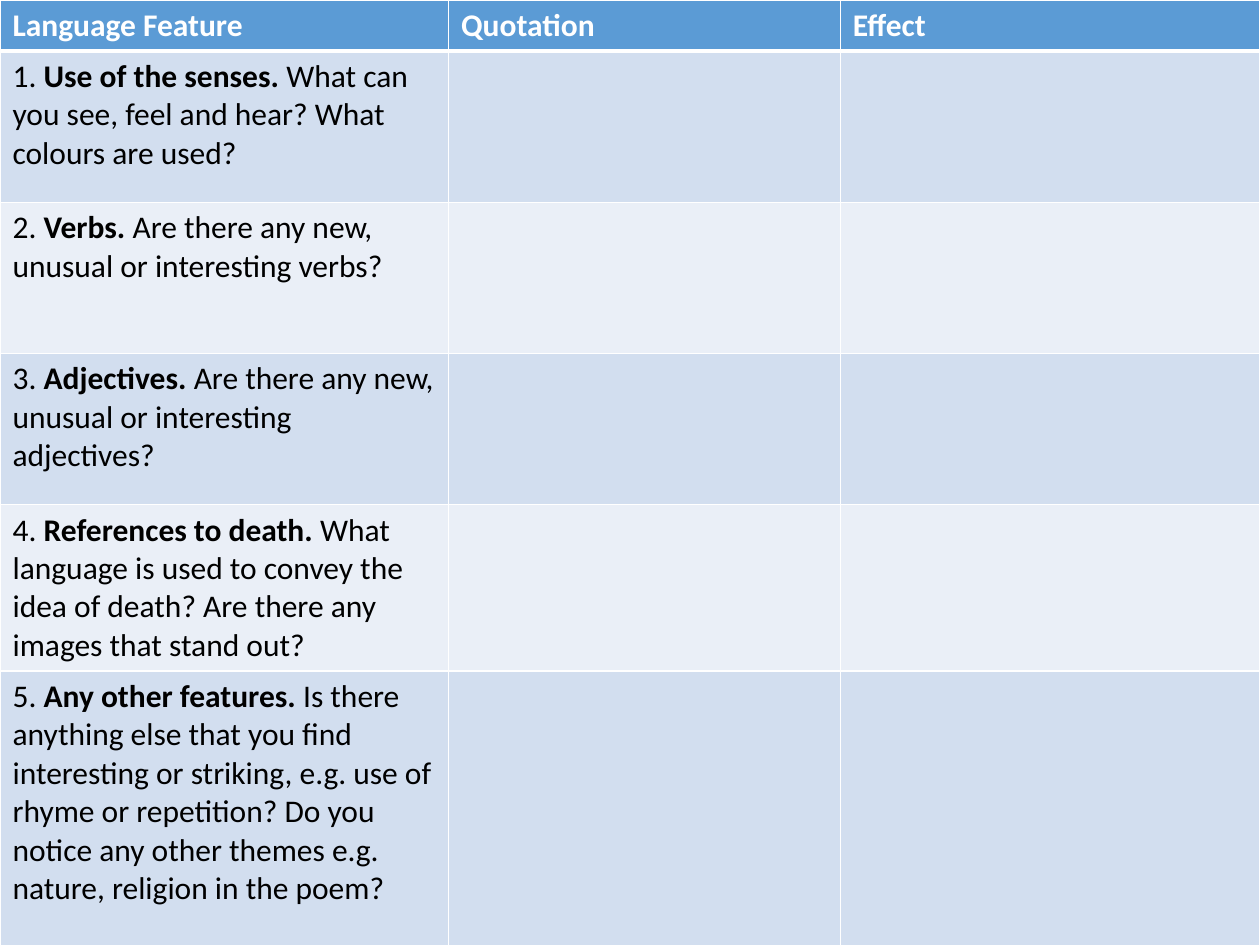
from lxml import etree
from pptx import Presentation
from pptx import util as u
from pptx.dml.color import RGBColor
from pptx.oxml.ns import qn

COLOURS = {"header": "5B9BD5", "odd": "D2DEEF", "even": "EAEFF7",
           "white": "FFFFFF", "black": "000000"}
COLUMN_WIDTHS = [3.56, 3.11, 3.33]
ROW_HEIGHTS = [0.4, 1.2, 1.2, 1.2, 1.32, 2.18]
HEADINGS = ["Language Feature", "Quotation", "Effect"]
FEATURES = [
    ("Use of the senses.", "What can you see, feel and hear? What colours are used?"),
    ("Verbs.", "Are there any new, unusual or interesting verbs?"),
    ("Adjectives.", "Are there any new, unusual or interesting adjectives?"),
    ("References to death.", "What language is used to convey the idea of death? "
     "Are there any images that stand out?"),
    ("Any other features.", "Is there anything else that you find interesting or "
     "striking, e.g. use of rhyme or repetition? Do you notice any other themes "
     "e.g. nature, religion in the poem?"),
]


def add_span(para, words, colour, bold=False):
    span = para.add_run()
    span.text = words
    style = {"name": "Calibri", "size": u.Pt(18), "bold": bold}
    for name, value in style.items():
        setattr(span.font, name, value)
    span.font.color.rgb = RGBColor.from_string(COLOURS[colour])


def set_borders(cell, top=1, bottom=1):
    """Draw white cell borders; they must come before the fill in the XML."""
    properties = cell._tc.get_or_add_tcPr()
    widths = {"lnL": 1, "lnR": 1, "lnT": top, "lnB": bottom}
    for position, (side, width) in enumerate(widths.items()):
        line = etree.Element(qn(f"a:{side}"), w=str(u.Pt(width)))
        fill = etree.SubElement(line, qn("a:solidFill"))
        etree.SubElement(fill, qn("a:srgbClr"), val=COLOURS["white"])
        properties.insert(position, line)


def style_cell(cell, row):
    band = "header" if row == 0 else "odd" if row % 2 else "even"
    cell.fill.solid()
    cell.fill.fore_color.rgb = RGBColor.from_string(COLOURS[band])
    set_borders(cell, top=3 if row == 1 else 1, bottom=3 if row == 0 else 1)


def add_feature_table(slide):
    frame = slide.shapes.add_table(len(ROW_HEIGHTS), len(COLUMN_WIDTHS), 0, 0,
                                   u.Inches(10), u.Inches(7.5))
    table = frame.table
    for column, width in zip(table.columns, COLUMN_WIDTHS):
        column.width = u.Inches(width)
    for index, (row, height) in enumerate(zip(table.rows, ROW_HEIGHTS)):
        row.height = u.Inches(height)
        for cell in row.cells:
            style_cell(cell, index)
    return table


def fill_table(table):
    for column, heading in enumerate(HEADINGS):
        para = table.cell(0, column).text_frame.paragraphs[0]
        add_span(para, heading, "white", bold=True)
    for number, (feature, question) in enumerate(FEATURES, start=1):
        para = table.cell(number, 0).text_frame.paragraphs[0]
        add_span(para, f"{number}. ", "black")
        add_span(para, f"{feature} ", "black", bold=True)
        add_span(para, question, "black")


def main():
    deck = Presentation()
    deck.slide_width, deck.slide_height = u.Inches(10), u.Inches(7.5)
    slide = deck.slides.add_slide(deck.slide_layouts[6])
    fill_table(add_feature_table(slide))
    deck.save("out.pptx")


if __name__ == "__main__":
    main()
